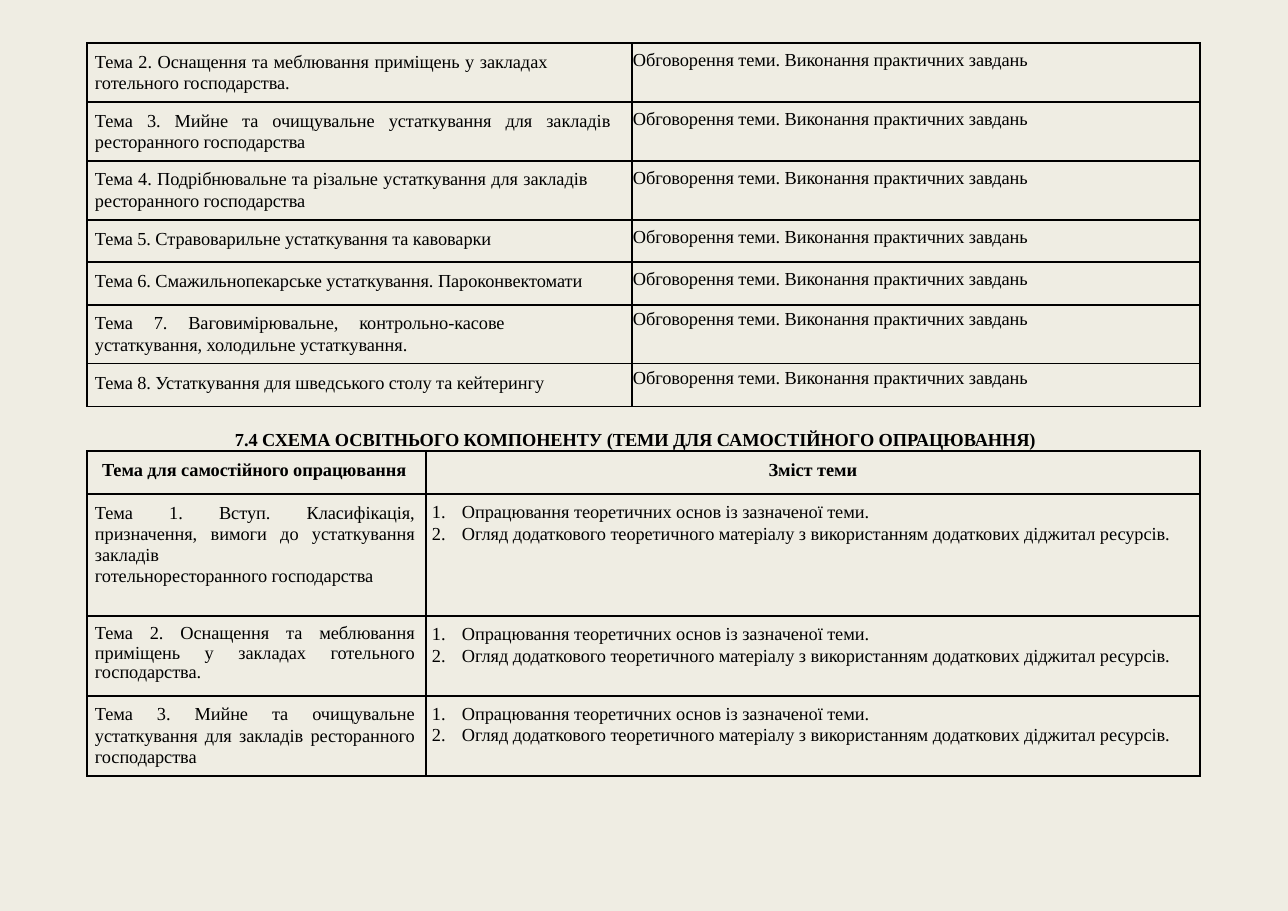
"""Build the slide with the course topic tables."""
from dataclasses import dataclass, replace

from lxml import etree
from pptx import Presentation
from pptx.dml.color import RGBColor
from pptx.enum.text import MSO_ANCHOR, PP_ALIGN
from pptx.oxml.ns import qn
from pptx.util import Emu, Pt

LEFT, CENTER, JUSTIFY = PP_ALIGN.LEFT, PP_ALIGN.CENTER, PP_ALIGN.JUSTIFY
TOP = MSO_ANCHOR.TOP
EMU_PER_PX = 914400 / 110.2


@dataclass(frozen=True)
class Theme:
    background: RGBColor = RGBColor(0xEF, 0xED, 0xE3)
    ink: str = "000000"
    font: str = "Times New Roman"
    size: float = 12
    tracking: int = -5
    border: float = 1


THEME = Theme()


@dataclass(frozen=True)
class Style:
    before: float = 0
    line: float | Pt | None = None
    indent: int = 0
    hanging: int = 0
    align: PP_ALIGN = LEFT
    bold: bool = False
    numbered: bool = False


@dataclass(frozen=True)
class Line:
    text: str
    style: Style


@dataclass(frozen=True)
class Cell:
    lines: tuple[Line, ...]
    top: int
    right: int = 0


@dataclass(frozen=True)
class Grid:
    left: int
    top: int
    columns: tuple[int, ...]
    rows: tuple[int, ...]
    cells: tuple[tuple[Cell, ...], ...]


def px(length: int) -> Emu:
    """Turn px into EMU."""
    return Emu(round(length * EMU_PER_PX))


TOPIC = Style(before=5.2, line=Pt(13.8), indent=8, align=JUSTIFY)
SHORT_TOPIC = Style(before=5.8, indent=8)
NUMBERED = Style(line=Pt(14.1), indent=36, hanging=-30, numbered=True)
HEADER = Style(before=6, bold=True)
TITLE = Line("7.4 СХЕМА ОСВІТНЬОГО КОМПОНЕНТУ (ТЕМИ ДЛЯ САМОСТІЙНОГО ОПРАЦЮВАННЯ)",
             Style(before=1, indent=1, bold=True))


def long_topic(text: str, right: int, style: Style = TOPIC) -> Cell:
    """Describe a justified topic of several lines."""
    return Cell((Line(text, style),), 8, right)


def short_topic(text: str) -> Cell:
    """Describe a topic of one line."""
    return Cell((Line(text, SHORT_TOPIC),), 9)


def activity(before: float = 4.3, top: int = 7) -> Cell:
    """Describe the activity that goes with a topic."""
    return Cell((Line("Обговорення теми. Виконання практичних завдань",
                      Style(before=before, indent=1)),), top)


STUDY_CONTENT = Cell((
    Line("Опрацювання теоретичних основ із зазначеної теми.", replace(NUMBERED, before=4.3)),
    Line("Огляд додаткового теоретичного матеріалу з використанням додаткових "
         "діджитал ресурсів.", NUMBERED),
), 7)

PRACTICE = Grid(87, 43, (545, 568), (59, 59, 59, 42, 43, 59, 43), (
    (long_topic("Тема 2. Оснащення та меблювання приміщень у "
                "закладах готельного господарства.", 84), activity()),
    (long_topic("Тема 3. Мийне та очищувальне устаткування для закладів "
                "ресторанного господарства", 21), activity()),
    (long_topic("Тема 4. Подрібнювальне та різальне устаткування для закладів "
                "ресторанного господарства", 44), activity()),
    (short_topic("Тема 5. Стравоварильне устаткування та кавоварки"), activity()),
    (short_topic("Тема 6. Смажильнопекарське устаткування. Пароконвектомати"), activity()),
    (long_topic("Тема 7. Ваговимірювальне, контрольно-касове "
                "устаткування, холодильне устаткування.", 127), activity(3.1, 4)),
    (short_topic("Тема 8. Устаткування для шведського столу та кейтерингу"), activity(3.1, 4)),
))

STUDY = Grid(87, 451, (339, 774), (43, 122, 80, 80), (
    (Cell((Line("Тема для самостійного опрацювання", replace(HEADER, indent=15)),), 9),
     Cell((Line("Зміст теми", replace(HEADER, align=CENTER)),), 9)),
    (long_topic("Тема 1. Вступ. Класифікація, призначення, вимоги до устаткування закладів\n"
                "готельноресторанного господарства", 11), STUDY_CONTENT),
    (long_topic("Тема 2. Оснащення та меблювання приміщень у закладах готельного господарства.",
                11, replace(TOPIC, before=4.9, line=0.96)), STUDY_CONTENT),
    (long_topic("Тема 3. Мийне та очищувальне устаткування для закладів ресторанного "
                "господарства", 11), STUDY_CONTENT),
))


def write_lines(frame, lines: tuple[Line, ...]) -> None:
    """Write styled paragraphs into a text frame."""
    for index, line in enumerate(lines):
        paragraph = frame.add_paragraph() if index else frame.paragraphs[0]
        style = line.style
        paragraph.alignment = style.align
        paragraph.space_before = Pt(style.before)
        if style.line is not None:
            paragraph.line_spacing = style.line
        properties = paragraph._p.get_or_add_pPr()
        properties.set("marL", str(px(style.indent)))
        properties.set("indent", str(px(style.hanging)))
        if style.numbered:
            etree.SubElement(properties, qn("a:buAutoNum"), type="arabicPeriod")
        for part, text in enumerate(line.text.split("\n")):
            if part:
                paragraph.add_line_break()
            run = paragraph.add_run()
            run.text = text
            run.font.name = THEME.font
            run.font.size = Pt(THEME.size)
            run.font.bold = style.bold
            run.font.color.rgb = RGBColor.from_string(THEME.ink)
            run._r.get_or_add_rPr().set("spc", str(THEME.tracking))


def draw_borders(cell) -> None:
    """Outline the four sides of a cell."""
    properties = cell._tc.get_or_add_tcPr()
    for side in ("a:lnL", "a:lnR", "a:lnT", "a:lnB"):
        border = etree.SubElement(properties, qn(side), w=str(Pt(THEME.border)))
        fill = etree.SubElement(border, qn("a:solidFill"))
        etree.SubElement(fill, qn("a:srgbClr"), val=THEME.ink)


def draw_grid(slide, grid: Grid) -> None:
    """Add a table with its cells."""
    table = slide.shapes.add_table(
        len(grid.rows), len(grid.columns), px(grid.left), px(grid.top),
        px(sum(grid.columns)), px(sum(grid.rows))).table
    table.first_row = table.horz_banding = False
    for column, width in zip(table.columns, grid.columns):
        column.width = px(width)
    for row, height, contents in zip(table.rows, grid.rows, grid.cells):
        row.height = px(height)
        for cell, content in zip(row.cells, contents):
            cell.margin_left = cell.margin_bottom = 0
            cell.margin_top, cell.margin_right = px(content.top), px(content.right)
            cell.vertical_anchor = TOP
            draw_borders(cell)
            cell.fill.background()
            write_lines(cell.text_frame, content.lines)


def main() -> None:
    """Build and save the presentation."""
    presentation = Presentation()
    presentation.slide_width, presentation.slide_height = px(1288), px(911)
    slide = presentation.slides.add_slide(presentation.slide_layouts[6])
    slide.background.fill.solid()
    slide.background.fill.fore_color.rgb = THEME.background
    frame = slide.shapes.add_textbox(px(234), px(427), px(860), px(25)).text_frame
    frame.word_wrap = True
    frame.margin_left = frame.margin_right = frame.margin_bottom = 0
    frame.margin_top = px(1)
    write_lines(frame, (TITLE,))
    for grid in (STUDY, PRACTICE):
        draw_grid(slide, grid)
    presentation.save("out.pptx")


if __name__ == "__main__":
    main()
